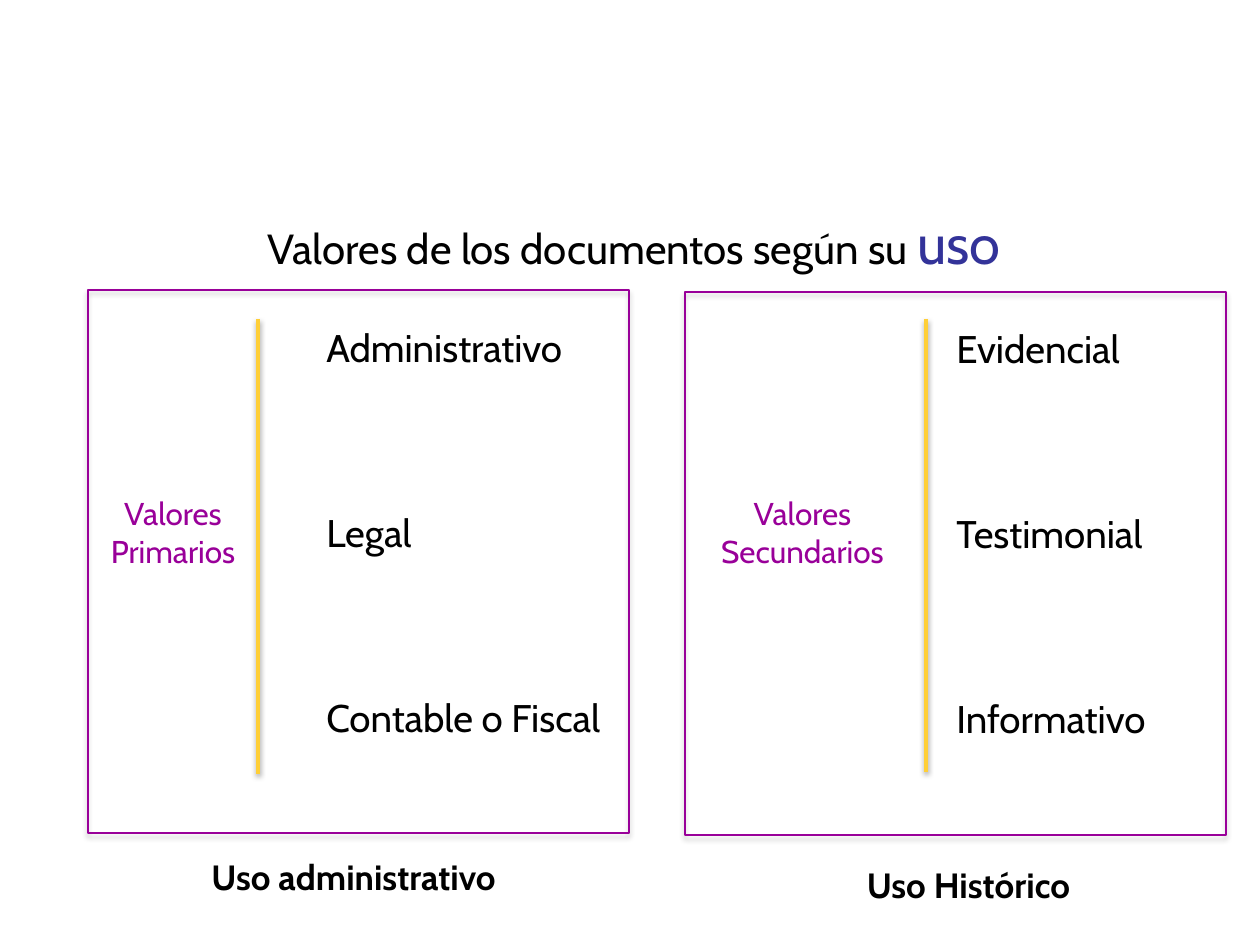
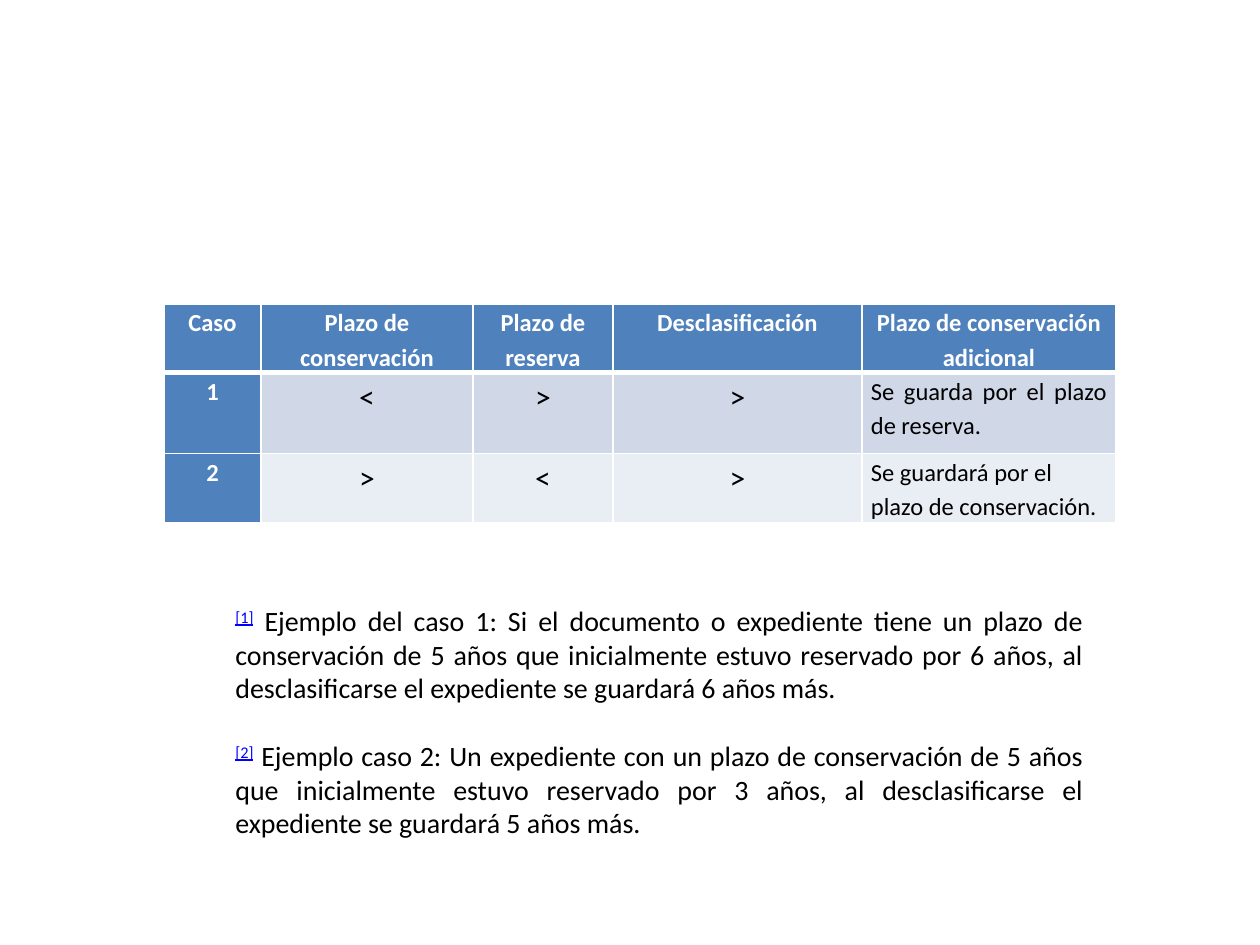
from dataclasses import dataclass

from lxml.etree import SubElement
from pptx import Presentation
from pptx.dml.color import RGBColor
from pptx.enum.shapes import MSO_CONNECTOR, MSO_SHAPE
from pptx.enum.text import MSO_ANCHOR, MSO_AUTO_SIZE, PP_ALIGN
from pptx.oxml.ns import qn
from pptx.util import Emu, Pt

PX = 914400 / 126
BLACK = "000000"
WHITE = "FFFFFF"
PURPLE = "990099"
GOLD = "FFCF37"
INDIGO = "333399"
LINK_BLUE = "0000FF"
HEADER_BLUE = "4F81BD"
BAND_FILLS = ("D0D8E8", "E9EDF4")
DISPLAY = "Cabin"
BODY = "Calibri"
TITLE_ONLY, BLANK = 5, 6


@dataclass(frozen=True)
class Box:
    left: int
    top: int
    width: int
    height: int

    def emu(self) -> list:
        return [px(n) for n in (self.left, self.top, self.width, self.height)]


@dataclass(frozen=True)
class Style:
    size: int
    color: str = BLACK
    bold: bool = False
    align: PP_ALIGN = PP_ALIGN.LEFT
    font: str = DISPLAY


@dataclass(frozen=True)
class Panel:
    frame: Box
    label: Box
    label_lines: tuple
    values: Box
    value_lines: tuple
    caption: Box
    caption_text: str
    caption_wrap: bool
    divider_x: int
    divider_bottom: int


@dataclass(frozen=True)
class Case:
    number: str
    signs: tuple
    outcome: str
    align: PP_ALIGN
    fill: str
    height: int


LABEL = Style(18, PURPLE, align=PP_ALIGN.CENTER)
VALUE = Style(22)
CAPTION = Style(20, bold=True, align=PP_ALIGN.CENTER)
HEADING = Style(14, WHITE, True, PP_ALIGN.CENTER, BODY)
SIGN = Style(18, align=PP_ALIGN.CENTER, font=BODY)
VALUE_GAP = 79.3
DIVIDER_TOP = 319

PANELS = (
    Panel(Box(88, 290, 541, 543), Box(88, 488, 170, 97), ("Valores", "Primarios"),
          Box(314, 318, 315, 432), ("Administrativo", "Legal", "Contable o Fiscal"),
          Box(174, 849, 359, 97), "Uso administrativo", True, 258, 774),
    Panel(Box(685, 292, 541, 543), Box(696, 488, 213, 97), ("Valores", "Secundarios"),
          Box(944, 319, 224, 432), ("Evidencial", "Testimonial", "Informativo"),
          Box(838, 857, 261, 55), "Uso Histórico", False, 926, 772),
)

HEADERS = ("Caso", "Plazo de conservación", "Plazo de reserva",
           "Desclasificación", "Plazo de conservación adicional")
COLUMN_WIDTHS = (97, 212, 140, 249, 254)
HEADER_HEIGHT = 67
CASES = (
    Case("1", ("<", ">", ">"), "Se guarda por el plazo de reserva.",
         PP_ALIGN.JUSTIFY, BAND_FILLS[0], 81),
    Case("2", (">", "<", ">"), "Se guardará por el plazo de conservación.",
         PP_ALIGN.LEFT, BAND_FILLS[1], 69),
)
EXAMPLES = (
    ("[1]", " Ejemplo del caso 1: Si el documento o expediente tiene un plazo de "
            "conservación de 5 años que inicialmente estuvo reservado por 6 años, al "
            "desclasificarse el expediente se guardará 6 años más."),
    ("[2]", " Ejemplo caso 2: Un expediente con un plazo de conservación de 5 años "
            "que inicialmente estuvo reservado por 3 años, al desclasificarse el "
            "expediente se guardará 5 años más."),
)


def px(n: int) -> Emu:
    return Emu(round(n * PX))


def rgb(color: str) -> RGBColor:
    return RGBColor.from_string(color)


def format_paragraph(p, style: Style) -> None:
    p.alignment = style.align
    p.font.name = style.font
    p.font.size = Pt(style.size)
    p.font.bold = style.bold
    p.font.color.rgb = rgb(style.color)


def add_paragraph(tf, index: int, gap: float = 0):
    p = tf.add_paragraph() if index else tf.paragraphs[0]
    if index:
        p.space_before = Pt(gap)
    return p


def add_text(s, box: Box, lines: tuple, style: Style, gap: float = 0, wrap: bool = False) -> None:
    tf = s.shapes.add_textbox(*box.emu()).text_frame
    tf.word_wrap = wrap
    tf.auto_size = MSO_AUTO_SIZE.SHAPE_TO_FIT_TEXT
    for i, line in enumerate(lines):
        p = add_paragraph(tf, i, gap)
        p.text = line
        format_paragraph(p, style)


def add_shadow(sp, distance: float, opacity: int) -> None:
    effects = SubElement(sp._element.spPr, qn("a:effectLst"))
    shadow = SubElement(effects, qn("a:outerShdw"), blurRad=str(Pt(3.1)),
                        dist=str(Pt(distance)), dir="5400000", rotWithShape="0")
    color = SubElement(shadow, qn("a:srgbClr"), val=BLACK)
    SubElement(color, qn("a:alpha"), val=str(opacity * 1000))


def set_line(sp, color: str, width: float) -> None:
    sp.line.color.rgb = rgb(color)
    sp.line.width = Pt(width)


def add_panel(s, panel: Panel) -> None:
    add_text(s, panel.label, panel.label_lines, LABEL)
    add_text(s, panel.values, panel.value_lines, VALUE, VALUE_GAP)
    add_text(s, panel.caption, (panel.caption_text,), CAPTION, wrap=panel.caption_wrap)
    frame = s.shapes.add_shape(MSO_SHAPE.RECTANGLE, *panel.frame.emu())
    frame.fill.background()
    set_line(frame, PURPLE, 0.75)
    add_shadow(frame, 1.8, 35)
    x = px(panel.divider_x)
    divider = s.shapes.add_connector(MSO_CONNECTOR.STRAIGHT, x, px(DIVIDER_TOP),
                                     x, px(panel.divider_bottom))
    set_line(divider, GOLD, 2)
    add_shadow(divider, 1.6, 38)


def add_title(s) -> None:
    sp = s.shapes.title
    sp.left, sp.top, sp.width, sp.height = Box(231, 202, 806, 81).emu()
    tf = sp.text_frame
    tf.word_wrap = False
    tf.auto_size = MSO_AUTO_SIZE.SHAPE_TO_FIT_TEXT
    tf.vertical_anchor = MSO_ANCHOR.TOP
    p = tf.paragraphs[0]
    p.alignment = PP_ALIGN.CENTER
    p.font.name = DISPLAY
    for text, size, color in (("Valores de los documentos según su ", 24, BLACK),
                              ("uso", 32, INDIGO)):
        r = p.add_run()
        r.text = text
        r.font.size = Pt(size)
        r.font.color.rgb = rgb(color)


def set_cell(cell, text: str, style: Style, fill: str, top: int = 1, bottom: int = 1) -> None:
    tc_pr = cell._tc.get_or_add_tcPr()
    for side, width in (("L", 1), ("R", 1), ("T", top), ("B", bottom)):
        ln = SubElement(tc_pr, qn(f"a:ln{side}"), w=str(Pt(width)))
        SubElement(SubElement(ln, qn("a:solidFill")), qn("a:srgbClr"), val=WHITE)
    cell.fill.solid()
    cell.fill.fore_color.rgb = rgb(fill)
    cell.margin_left = cell.margin_right = px(9)
    cell.margin_top = cell.margin_bottom = 0
    p = cell.text_frame.paragraphs[0]
    p.text = text
    p.line_spacing = 1.15
    format_paragraph(p, style)


def add_cases_table(s) -> None:
    heights = (HEADER_HEIGHT, *(case.height for case in CASES))
    box = Box(164, 304, sum(COLUMN_WIDTHS), sum(heights))
    table = s.shapes.add_table(len(heights), len(HEADERS), *box.emu()).table
    table.horz_banding = False
    for column, width in zip(table.columns, COLUMN_WIDTHS):
        column.width = px(width)
    for row, height in zip(table.rows, heights):
        row.height = px(height)
    for c, header in enumerate(HEADERS):
        set_cell(table.cell(0, c), header, HEADING, HEADER_BLUE, bottom=3)
    for i, case in enumerate(CASES, 1):
        top = 3 if i == 1 else 1
        set_cell(table.cell(i, 0), case.number, HEADING, HEADER_BLUE, top)
        for c, sign in enumerate(case.signs, 1):
            set_cell(table.cell(i, c), sign, SIGN, case.fill, top)
        outcome = Style(14, align=case.align, font=BODY)
        set_cell(table.cell(i, len(HEADERS) - 1), case.outcome, outcome, case.fill, top)


def add_examples(s) -> None:
    tf = s.shapes.add_textbox(*Box(223, 596, 873, 251).emu()).text_frame
    tf.word_wrap = True
    tf.auto_size = MSO_AUTO_SIZE.SHAPE_TO_FIT_TEXT
    tf.vertical_anchor = MSO_ANCHOR.MIDDLE
    for i, (mark, text) in enumerate(EXAMPLES):
        p = add_paragraph(tf, i, 19.5)
        p.alignment = PP_ALIGN.JUSTIFY
        p.font.name = BODY
        p.font.size = Pt(16)
        r = p.add_run()
        r.text = mark
        r.font.underline = True
        r.font.color.rgb = rgb(LINK_BLUE)
        r.font._element.set("baseline", "30000")
        r = p.add_run()
        r.text = text
        r.font.color.rgb = rgb(BLACK)


def main() -> None:
    prs = Presentation()
    prs.slide_width, prs.slide_height = px(1260), px(945)
    s = prs.slides.add_slide(prs.slide_layouts[TITLE_ONLY])
    add_title(s)
    for panel in PANELS:
        add_panel(s, panel)
    s = prs.slides.add_slide(prs.slide_layouts[BLANK])
    add_cases_table(s)
    add_examples(s)
    prs.save("out.pptx")


if __name__ == "__main__":
    main()
